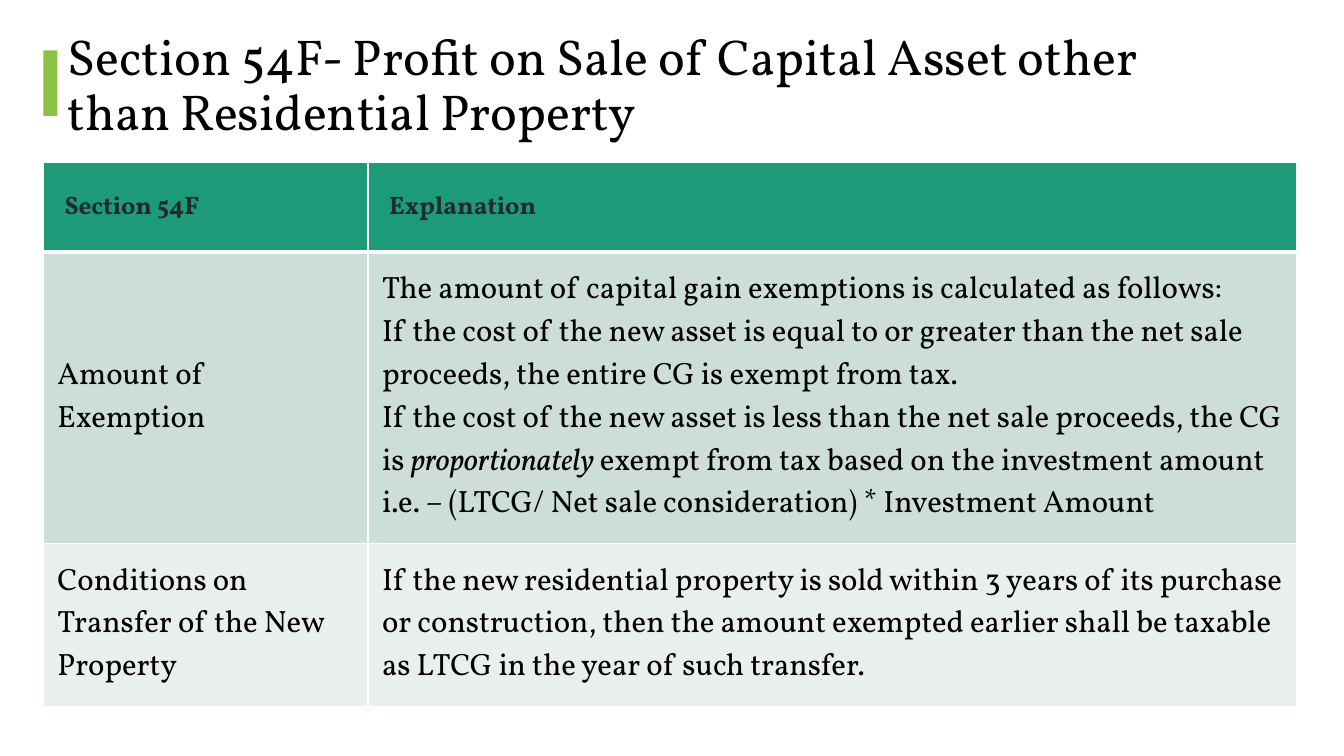
from dataclasses import dataclass

from lxml.etree import SubElement
from pptx import Presentation
from pptx.dml.color import RGBColor
from pptx.enum.shapes import MSO_SHAPE as Shape
from pptx.enum.text import MSO_ANCHOR as Anchor, MSO_AUTO_SIZE as AutoSize, PP_ALIGN as Align
from pptx.oxml.ns import qn
from pptx.util import Inches, Pt

FONT = "Vollkorn"
COLUMN_WIDTHS = (3.22, 9.21)


@dataclass(frozen=True)
class Span:
    text: str
    italic: bool = False


@dataclass(frozen=True)
class Row:
    height: float
    fill: str
    cells: tuple[tuple[Span, ...], ...]
    header: bool = False


ROWS = (
    Row(0.88, "1D9A78", ((Span("Section 54F"),), (Span("Explanation"),)), header=True),
    Row(2.69, "CDDED6", (
        (Span("Amount of Exemption"),),
        (
            Span(
                "The amount of capital gain exemptions is calculated as follows:\n"
                "If the cost of the new asset is equal to or greater than the net sale "
                "proceeds, the entire CG is exempt from tax.\n"
                "If the cost of the new asset is less than the net sale proceeds, the CG is "
            ),
            Span("proportionately ", italic=True),
            Span(
                "exempt from tax based on the investment amount i.e. – "
                "(LTCG/ Net sale consideration) * Investment Amount"
            ),
        ),
    )),
    Row(1.55, "E8EFEC", (
        (Span("Conditions on Transfer of the New Property"),),
        (Span(
            "If the new residential property is sold within 3 years of its purchase or "
            "construction, then the amount exempted earlier shall be taxable as LTCG "
            "in the year of such transfer."
        ),),
    )),
)


def colour(value: str) -> RGBColor:
    return RGBColor.from_string(value)


def apply(target, values: dict) -> None:
    for name, value in values.items():
        setattr(target, name, value)


def add_span(para, span: Span, size: float, ink: str, bold: bool = False) -> None:
    """Add a span to a paragraph, turning each newline into a line break."""
    for index, line in enumerate(span.text.split("\n")):
        if index:
            para.add_line_break()
        run = para.add_run()
        run.text = line
        apply(run.font, {"name": FONT, "size": Pt(size), "bold": bold, "italic": span.italic})
        run.font.color.rgb = colour(ink)


def add_borders(cell, bottom: float) -> None:
    properties = cell._tc.get_or_add_tcPr()
    for side, width in (("L", 1), ("R", 1), ("T", 1), ("B", bottom)):
        line = SubElement(properties, qn(f"a:ln{side}"), w=str(Pt(width)))
        SubElement(SubElement(line, qn("a:solidFill")), qn("a:srgbClr"), val="FFFFFF")


def fill_cell(cell, spans: tuple[Span, ...], row: Row) -> None:
    across, down = (0.21, 0.26) if row.header else (0.14, 0.17)
    apply(cell, {
        "margin_left": Inches(across), "margin_right": Inches(across),
        "margin_top": Inches(down), "margin_bottom": Inches(down),
        "vertical_anchor": Anchor.MIDDLE,
    })
    add_borders(cell, bottom=3 if row.header else 1)
    cell.fill.solid()
    cell.fill.fore_color.rgb = colour(row.fill)
    para = cell.text_frame.paragraphs[0]
    if row.header:
        apply(para, {"line_spacing": 1.07, "space_after": Pt(8)})
    size, ink = (18, "232931") if row.header else (22, "000000")
    for span in spans:
        add_span(para, span, size, ink, bold=row.header)


def add_title(page) -> None:
    title = page.shapes.title
    apply(title, {
        "left": Inches(0.57), "top": Inches(0.24),
        "width": Inches(11.93), "height": Inches(1.24),
    })
    apply(title.text_frame, {
        "word_wrap": True, "auto_size": AutoSize.NONE, "vertical_anchor": Anchor.MIDDLE,
    })
    para = title.text_frame.paragraphs[0]
    apply(para, {"alignment": Align.LEFT, "line_spacing": 0.9})
    heading = "Section 54F- Profit on Sale of Capital Asset other than Residential Property"
    add_span(para, Span(heading), 36, "000000")


def add_accent(page) -> None:
    accent = page.shapes.add_shape(
        Shape.RECTANGLE, Inches(0.43), Inches(0.5), Inches(0.14), Inches(0.65)
    )
    accent.shadow.inherit = False
    accent.fill.solid()
    accent.fill.fore_color.rgb = colour("8BC145")
    accent.line.fill.background()


def add_rules_table(page) -> None:
    table = page.shapes.add_table(
        len(ROWS), len(COLUMN_WIDTHS), Inches(0.43), Inches(1.61),
        Inches(sum(COLUMN_WIDTHS)), Inches(sum(row.height for row in ROWS)),
    ).table
    for column, width in zip(table.columns, COLUMN_WIDTHS):
        column.width = Inches(width)
    for table_row, row in zip(table.rows, ROWS):
        table_row.height = Inches(row.height)
        for cell, spans in zip(table_row.cells, row.cells):
            fill_cell(cell, spans, row)


def main() -> None:
    deck = Presentation()
    apply(deck, {"slide_width": Inches(13.33), "slide_height": Inches(7.5)})
    page = deck.slides.add_slide(deck.slide_layouts.get_by_name("Title Only"))
    add_title(page)
    add_accent(page)
    add_rules_table(page)
    deck.save("out.pptx")


if __name__ == "__main__":
    main()
